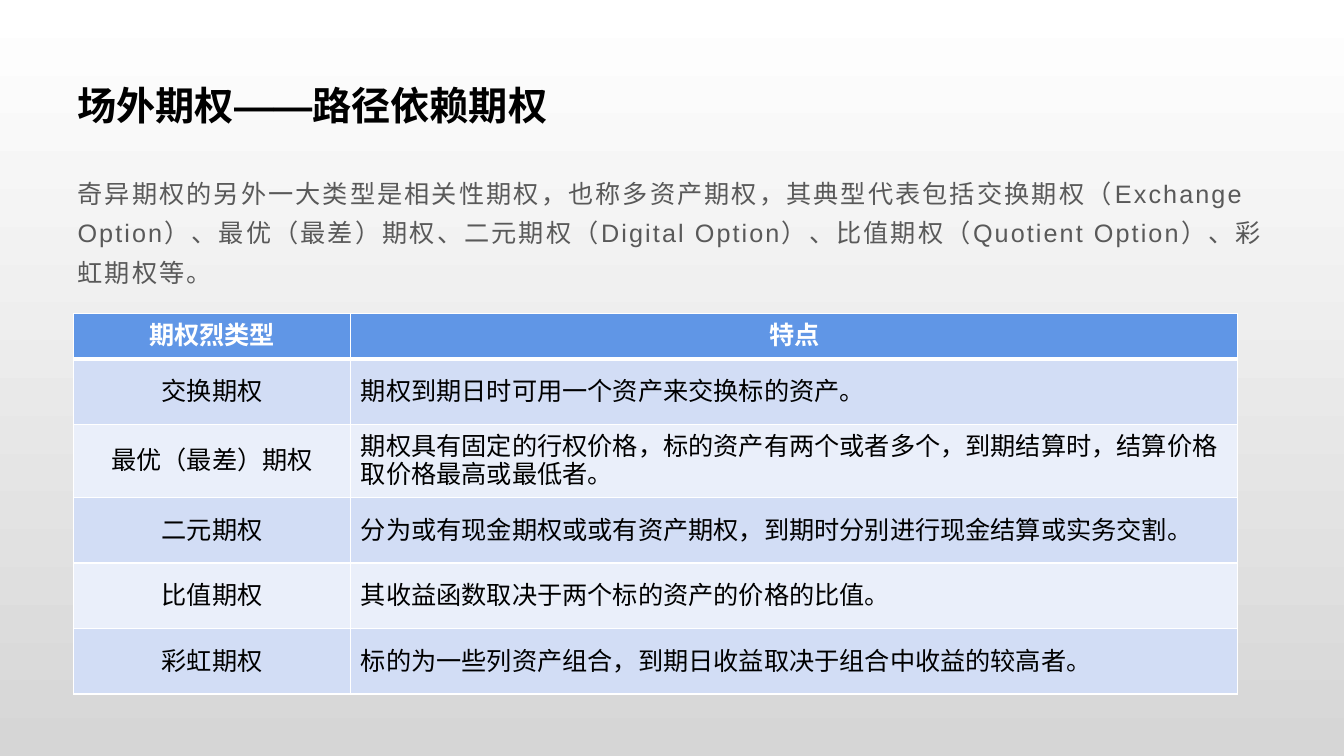
from dataclasses import dataclass

from lxml.etree import SubElement
from pptx import Presentation
from pptx.dml.color import RGBColor
from pptx.enum.text import MSO_ANCHOR, MSO_AUTO_SIZE, PP_ALIGN
from pptx.oxml.ns import qn
from pptx.util import Cm, Pt


@dataclass(frozen=True)
class Theme:
    font: str = "Arial"
    title_size: int = 28
    text_size: int = 18
    black: str = "000000"
    white: str = "FFFFFF"
    grey: str = "595959"
    header: str = "6096E6"
    band_dark: str = "D2DDF5"
    band_light: str = "EAEFFA"
    page_top: str = "FFFFFF"
    page_bottom: str = "D6D6D6"


@dataclass(frozen=True)
class Frame:
    left: float
    top: float
    width: float
    height: float


@dataclass(frozen=True)
class OptionRow:
    kind: str
    feature: str
    height: float = 1.65


THEME = Theme()
TITLE_FRAME = Frame(1.7, 1.65, 30.48, 1.96)
INTRO_FRAME = Frame(1.7, 4.14, 30.48, 13.21)
TITLE = "场外期权——路径依赖期权"
INTRO = (
    "奇异期权的另外一大类型是相关性期权，也称多资产期权，其典型代表包括交换期权（Exchange Option）、"
    "最优（最差）期权、二元期权（Digital Option）、比值期权（Quotient Option）、彩虹期权等。"
)
COLUMN_WIDTHS = (6.99, 22.35)
OPTION_ROWS = (
    OptionRow("期权烈类型", "特点", 1.14),
    OptionRow("交换期权", "期权到期日时可用一个资产来交换标的资产。"),
    OptionRow(
        "最优（最差）期权",
        "期权具有固定的行权价格，标的资产有两个或者多个，到期结算时，结算价格取价格最高或最低者。",
        1.85,
    ),
    OptionRow("二元期权", "分为或有现金期权或或有资产期权，到期时分别进行现金结算或实务交割。"),
    OptionRow("比值期权", "其收益函数取决于两个标的资产的价格的比值。"),
    OptionRow("彩虹期权", "标的为一些列资产组合，到期日收益取决于组合中收益的较高者。"),
)
TABLE_FRAME = Frame(1.85, 7.9, sum(COLUMN_WIDTHS), sum(row.height for row in OPTION_ROWS))


def lengths(frame: Frame) -> tuple:
    return Cm(frame.left), Cm(frame.top), Cm(frame.width), Cm(frame.height)


def add_span(para, text: str, size: int, color: str, bold: bool = False, spacing: float = 0) -> None:
    span = para.add_run()
    span.text = text
    span.font.size = Pt(size)
    span.font.bold = bold
    span.font.name = THEME.font
    span.font.color.rgb = RGBColor.from_string(color)
    properties = span.font._element
    SubElement(properties, qn("a:ea"), typeface=THEME.font)
    if spacing:
        properties.set("spc", str(round(spacing * 100)))


def prepare_placeholder(box, frame: Frame, anchor: MSO_ANCHOR):
    box.left, box.top, box.width, box.height = lengths(frame)
    text_frame = box.text_frame
    text_frame.word_wrap = True
    text_frame.auto_size = MSO_AUTO_SIZE.NONE
    text_frame.vertical_anchor = anchor
    para = text_frame.paragraphs[0]
    para.alignment = PP_ALIGN.LEFT
    para.space_before = Pt(0)
    return para


def paint_background(page) -> None:
    fill = page.background.fill
    fill.gradient()
    fill.gradient_angle = 270
    for stop, color in zip(fill.gradient_stops, (THEME.page_top, THEME.page_bottom)):
        stop.color.rgb = RGBColor.from_string(color)


def add_title(page) -> None:
    para = prepare_placeholder(page.shapes.title, TITLE_FRAME, MSO_ANCHOR.MIDDLE)
    add_span(para, TITLE, THEME.title_size, THEME.black, bold=True)


def add_intro(page) -> None:
    para = prepare_placeholder(page.placeholders[1], INTRO_FRAME, MSO_ANCHOR.TOP)
    para.line_spacing = 1.3
    para.space_after = Pt(10)
    properties = para._p.get_or_add_pPr()
    properties.set("marL", "0")
    properties.set("indent", "0")
    SubElement(properties, qn("a:buNone"))
    add_span(para, INTRO, THEME.text_size, THEME.grey, spacing=1.5)


def set_borders(cell, row_index: int) -> None:
    widths = {"lnL": 1, "lnR": 1, "lnT": 3 if row_index == 1 else 1, "lnB": 3 if row_index == 0 else 1}
    properties = cell._tc.get_or_add_tcPr()
    for side, width in widths.items():
        line = SubElement(properties, qn(f"a:{side}"), w=str(Pt(width)))
        fill = SubElement(line, qn("a:solidFill"))
        SubElement(fill, qn("a:srgbClr"), val=THEME.white)


def fill_cell(cell, text: str, row_index: int, column_index: int) -> None:
    is_header = row_index == 0
    band = THEME.band_dark if row_index % 2 else THEME.band_light
    set_borders(cell, row_index)
    cell.fill.solid()
    cell.fill.fore_color.rgb = RGBColor.from_string(THEME.header if is_header else band)
    cell.vertical_anchor = MSO_ANCHOR.MIDDLE
    para = cell.text_frame.paragraphs[0]
    para.alignment = PP_ALIGN.CENTER if is_header or column_index == 0 else PP_ALIGN.LEFT
    add_span(para, text, THEME.text_size, THEME.white if is_header else THEME.black, bold=is_header)


def add_option_table(page) -> None:
    table = page.shapes.add_table(len(OPTION_ROWS), len(COLUMN_WIDTHS), *lengths(TABLE_FRAME)).table
    for column, width in zip(table.columns, COLUMN_WIDTHS):
        column.width = Cm(width)
    for row_index, option in enumerate(OPTION_ROWS):
        table.rows[row_index].height = Cm(option.height)
        for column_index, text in enumerate((option.kind, option.feature)):
            fill_cell(table.cell(row_index, column_index), text, row_index, column_index)


def main() -> None:
    deck = Presentation()
    deck.slide_width, deck.slide_height = Cm(33.87), Cm(19.05)
    page = deck.slides.add_slide(deck.slide_layouts[1])
    paint_background(page)
    add_title(page)
    add_intro(page)
    add_option_table(page)
    deck.save("out.pptx")


if __name__ == "__main__":
    main()
